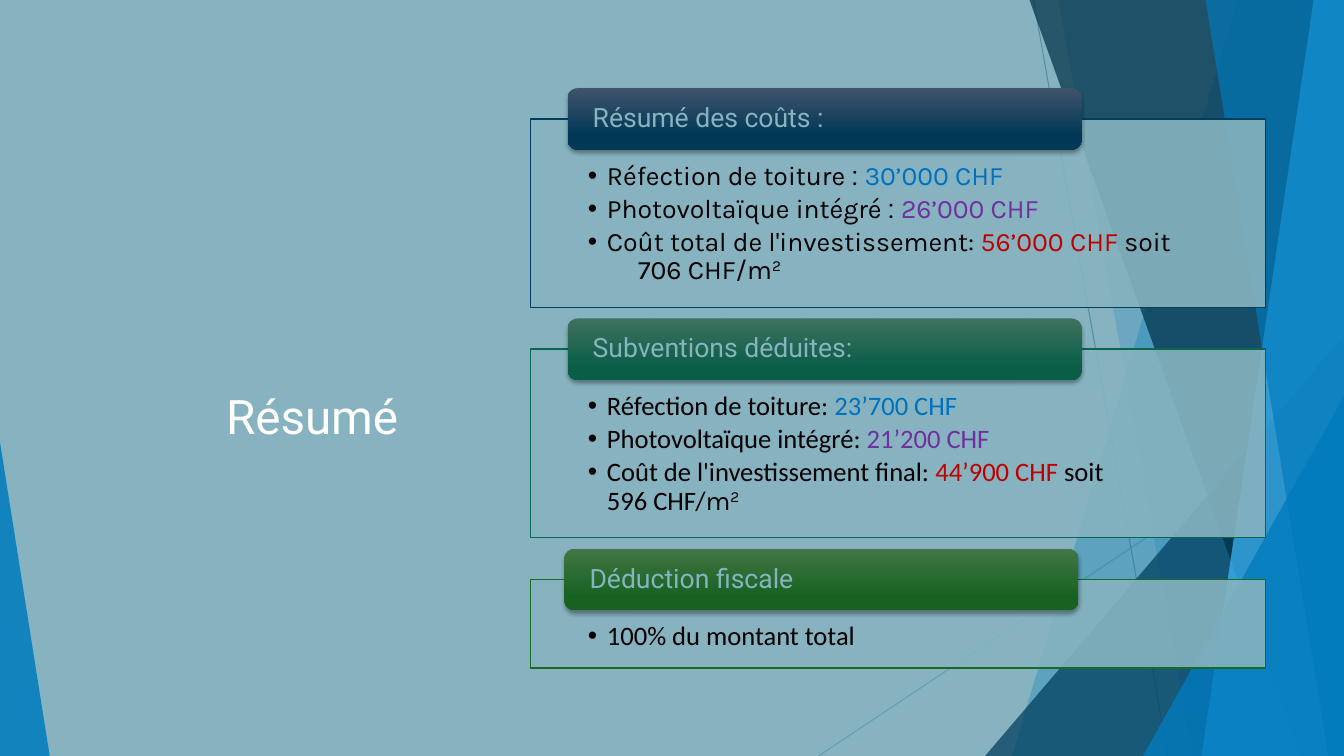
from lxml.etree import SubElement
from pptx import Presentation
from pptx.dml.color import RGBColor
from pptx.enum.shapes import MSO_CONNECTOR, MSO_SHAPE
from pptx.enum.text import MSO_ANCHOR, PP_ALIGN
from pptx.oxml.ns import qn
from pptx.util import Inches, Pt

COLOURS = {
    "back": "86B3BF", "white": "FFFFFF", "black": "000000",
    "blue": "0070C0", "purple": "7030A0", "red": "C00000",
    "ray": "54909F", "pale ray": "669FAE",
    "azure": "007BBD", "navy": "003D5E", "midnight": "002E46", "sky": "3EBCFF",
}
COLOURS = {name: RGBColor.from_string(value) for name, value in COLOURS.items()}

presentation = Presentation()
presentation.slide_width = Inches(40 / 3)
presentation.slide_height = Inches(7.5)
slide = presentation.slides.add_slide(presentation.slide_layouts[5])
slide.background.fill.solid()
slide.background.fill.fore_color.rgb = COLOURS["back"]
shapes = slide.shapes


def share(x, y, *size):
    """Turn percentages of the slide's width and height into lengths."""
    sides = (presentation.slide_width, presentation.slide_height) * 2
    return [round(side * part / 100) for side, part in zip(sides, (x, y, *size))]


def paint(shape, colour, opacity):
    shape.shadow.inherit = False
    shape.fill.solid()
    shape.fill.fore_color.rgb = COLOURS[colour]
    shape.line.fill.background()
    tint = shape.fill._xPr.find(qn("a:solidFill"))[0]
    SubElement(tint, qn("a:alpha"), val=str(opacity * 1000))


# Background rays: start, end, colour
for start, end, colour in [((76.9, 0), (86.9, 100), "ray"),
                           ((100, 53.7), (60.9, 100), "pale ray")]:
    ray = shapes.add_connector(MSO_CONNECTOR.STRAIGHT, *share(*start), *share(*end))
    ray.line.color.rgb = COLOURS[colour]
    ray.line.width = Pt(0.75)
    SubElement(ray._element.spPr, qn("a:effectLst"))

# Background facets: a band has the x of its top and bottom corners,
# a triangle has its left, top, width and the side of its tip
facets = [
    ((92.1, 75.3), "azure", 30),
    ((78.75, 88.75), "azure", 20),
    ((73.3, 44.4, 26.7, 1), "navy", 72),
    ((76.6, 96.8), "midnight", 70),
    ((97.75, 89.4), "sky", 70),
    ((89.7, 98.85), "azure", 65),
    ((85.05, 52.4, 14.95, 1), "azure", 80),
    ((0, 58.5, 3.7, 0), "azure", 85),
]
for outline, colour, opacity in facets:
    if len(outline) == 2:
        upper, lower = outline
        builder = shapes.build_freeform(*share(upper, 0))
        builder.add_line_segments([share(100, 0), share(100, 100), share(lower, 100)])
        facet = builder.convert_to_shape()
    else:
        left, top, width, tip = outline
        facet = shapes.add_shape(MSO_SHAPE.ISOSCELES_TRIANGLE,
                                 *share(left, top, width, 100 - top))
        facet.adjustments[0] = tip
    paint(facet, colour, opacity)

title = shapes.title
title.left, title.top, title.width, title.height = share(4.8, 24.53, 25.58, 34.93)
title.text_frame.vertical_anchor = MSO_ANCHOR.BOTTOM
paragraph = title.text_frame.paragraphs[0]
paragraph.alignment = PP_ALIGN.RIGHT
run = paragraph.add_run()
run.text = "Résumé"
run.font.name, run.font.size = "Roboto", Pt(34)
run.font.color.rgb = COLOURS["white"]

# Panels: heading, heading left, panel height, line, gradient, list of runs
BREAK = None
panels = [
    ("Résumé des coûts :", 42.23, 24.93, "003D5E", ("3F536B", "003856"), [
        [("Réfection de toiture ", "black", "Karla"), (": ", "black", "Roboto"),
         ("30’000 CHF", "blue", "Karla")],
        [("Photovoltaïque intégré ", "black", "Karla"), (": ", "black", "Roboto"),
         ("26’000 CHF", "purple", "Karla")],
        [("Coût total de l'investissement: ", "black", "Karla"),
         ("56’000 CHF ", "red", "Karla"), ("soit", "black", "Karla"), BREAK,
         ("\t706 CHF/m", "black", "Karla"), ("2", "black", "Karla", "30000")],
    ]),
    ("Subventions déduites:", 42.23, 24.93, "0B664F", ("3F725F", "0A5E48"), [
        [("Réfection de toiture: ", "black", "Calibri"), ("23’700 CHF", "blue", "Calibri")],
        [("Photovoltaïque intégré: ", "black", "Calibri"),
         ("21’200 CHF", "purple", "Calibri")],
        [("Coût de l'investissement final: ", "black", "Calibri"),
         ("44’900 CHF ", "red", "Calibri"), ("soit", "black", "Calibri"), BREAK,
         ("596 CHF/", "black", "Calibri"), ("m", "black", "Karla"),
         ("2", "black", "Karla", "30000")],
    ]),
    ("Déduction fiscale", 42, 11.73, "196B24", ("427646", "176221"), [
        [("100% du montant total", "black", "Calibri")],
    ]),
]
GAP, RISE = 5.53, 4.07
top = 15.73
for heading, heading_left, height, edge, gradient, items in panels:
    panel = shapes.add_shape(MSO_SHAPE.RECTANGLE, *share(39.46, top, 54.69, height))
    paint(panel, "back", 90)
    panel.line.color.rgb = RGBColor.from_string(edge)
    panel.line.width = Pt(1)
    frame = panel.text_frame
    frame.word_wrap = True
    frame.vertical_anchor = MSO_ANCHOR.TOP
    frame.margin_left = frame.margin_right = Inches(0.57)
    frame.margin_top, frame.margin_bottom = Inches(0.43), Inches(0.15)
    for index, item in enumerate(items):
        paragraph = frame.add_paragraph() if index else frame.paragraphs[0]
        paragraph.alignment = PP_ALIGN.LEFT
        paragraph.line_spacing = 0.9
        paragraph.space_after = Pt(3)
        properties = paragraph._p.get_or_add_pPr()
        properties.set("marL", str(Inches(0.19)))
        properties.set("indent", str(-Inches(0.19)))
        SubElement(properties, qn("a:buFont"), typeface="Arial")
        SubElement(properties, qn("a:buChar"), char="•")
        if BREAK in item:
            stops = SubElement(properties, qn("a:tabLst"))
            SubElement(stops, qn("a:tab"), pos=str(Inches(0.5)), algn="l")
        for piece in item:
            if piece is BREAK:
                paragraph.add_line_break()
                continue
            text, colour, font, *baseline = piece
            run = paragraph.add_run()
            run.text = text
            run.font.name, run.font.size = font, Pt(19)
            run.font.color.rgb = COLOURS[colour]
            if baseline:
                run._r.get_or_add_rPr().set("baseline", baseline[0])

    label = shapes.add_shape(MSO_SHAPE.ROUNDED_RECTANGLE,
                             *share(heading_left, top - RISE, 38.25, 8.13))
    label.line.fill.background()
    label.fill.gradient()
    label.fill.gradient_angle = 270
    for stop, position, colour in zip(label.fill.gradient_stops, (0, 0.78), gradient):
        stop.position = position
        stop.color.rgb = RGBColor.from_string(colour)
    label.shadow.inherit = False
    shadow = SubElement(label._element.spPr.find(qn("a:effectLst")), qn("a:outerShdw"),
                        blurRad=str(Pt(3)), dist=str(Pt(2)), dir="5400000", rotWithShape="0")
    black = SubElement(shadow, qn("a:srgbClr"), val="000000")
    SubElement(black, qn("a:alpha"), val="35000")
    frame = label.text_frame
    frame.word_wrap = True
    frame.vertical_anchor = MSO_ANCHOR.MIDDLE
    frame.margin_left = frame.margin_right = Inches(0.22)
    frame.margin_top = frame.margin_bottom = 0
    paragraph = frame.paragraphs[0]
    paragraph.alignment = PP_ALIGN.LEFT
    paragraph.line_spacing = 0.9
    run = paragraph.add_run()
    run.text = heading
    run.font.name, run.font.size = "Roboto", Pt(19)
    run.font.color.rgb = COLOURS["back"]
    top += height + GAP

presentation.save("out.pptx")
